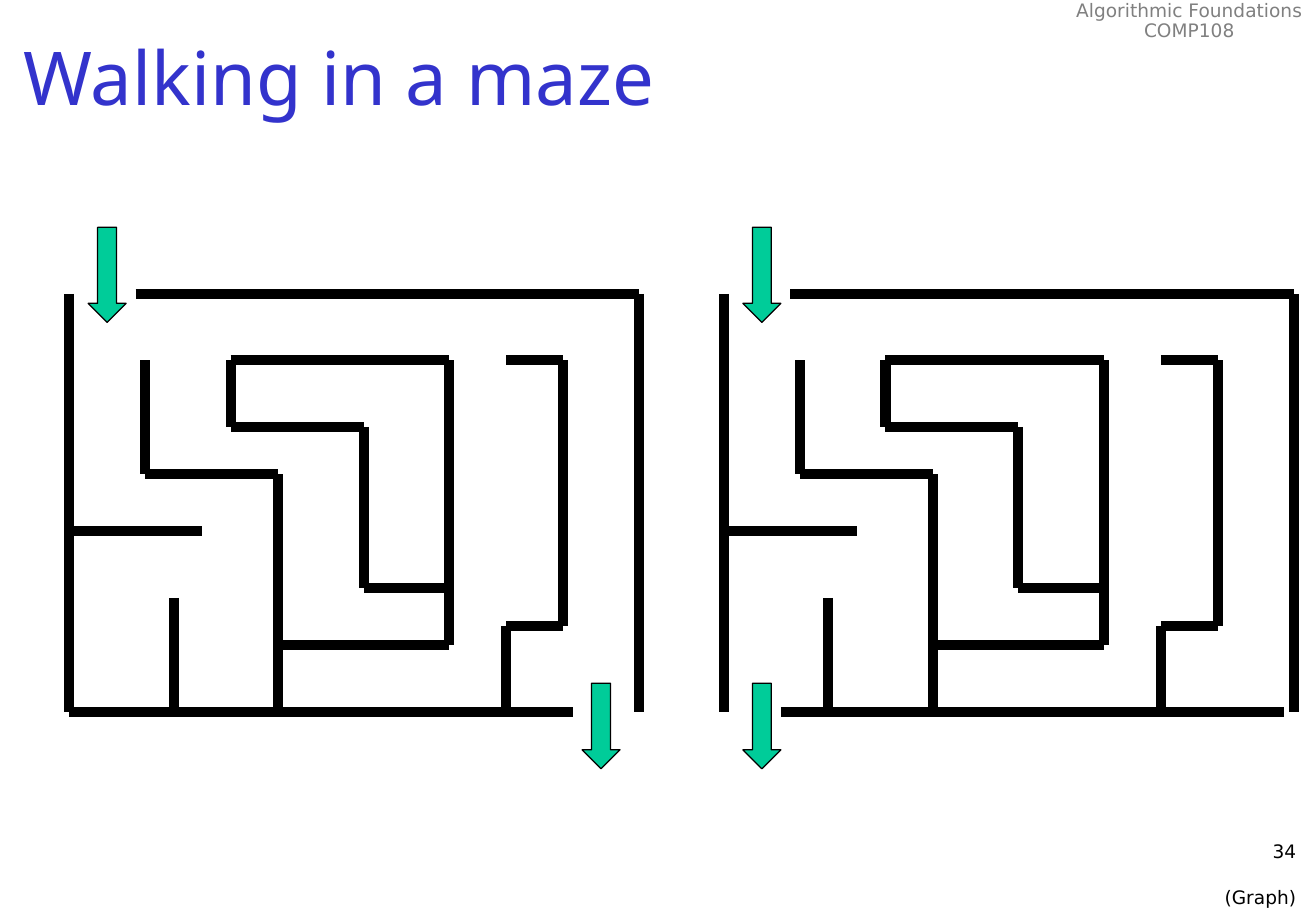
from dataclasses import dataclass

from lxml import etree
from pptx import Presentation
from pptx.dml.color import RGBColor
from pptx.enum.shapes import MSO_CONNECTOR, MSO_SHAPE
from pptx.enum.text import MSO_ANCHOR, MSO_AUTO_SIZE, PP_ALIGN
from pptx.oxml.ns import qn
from pptx.slide import Slide
from pptx.text.text import TextFrame
from pptx.util import Pt

STRAIGHT = MSO_CONNECTOR.STRAIGHT
DOWN_ARROW = MSO_SHAPE.DOWN_ARROW
LEFT, CENTER, RIGHT = PP_ALIGN.LEFT, PP_ALIGN.CENTER, PP_ALIGN.RIGHT
MIDDLE = MSO_ANCHOR.MIDDLE
NO_AUTOFIT = MSO_AUTO_SIZE.NONE

COLORS = {
    "title": "3333CC",
    "header": "808080",
    "text": "000000",
    "wall": "000000",
    "arrow": "00CC99",
}
CELL = 5.63  # points per maze grid unit
MAZE_TOP = 174.2
ARROW_WIDTH = 4


@dataclass(frozen=True)
class Wall:
    """A wall between two grid points."""
    x1: int
    y1: int
    x2: int
    y2: int


@dataclass(frozen=True)
class Arrow:
    """A downward arrow, in grid units."""
    x: int
    y: int
    height: int


@dataclass(frozen=True)
class Maze:
    """A maze whose bottom wall leaves a gap at the exit."""
    left: float
    bottom_wall: Wall
    exit_arrow: Arrow


SHARED_WALLS = [
    Wall(0, 0, 0, 44),
    Wall(7, 0, 60, 0),
    Wall(60, 0, 60, 44),
    Wall(8, 7, 8, 19),
    Wall(8, 19, 22, 19),
    Wall(22, 19, 22, 44),
    Wall(0, 25, 14, 25),
    Wall(11, 32, 11, 44),
    Wall(17, 7, 17, 14),
    Wall(17, 14, 31, 14),
    Wall(31, 14, 31, 31),
    Wall(31, 31, 40, 31),
    Wall(17, 7, 40, 7),
    Wall(40, 7, 40, 31),
    Wall(40, 31, 40, 37),
    Wall(22, 37, 40, 37),
    Wall(46, 7, 52, 7),
    Wall(52, 7, 52, 25),
    Wall(52, 25, 52, 35),
    Wall(46, 35, 52, 35),
    Wall(46, 35, 46, 44),
]
ENTRANCE = Arrow(2, -7, 10)
MAZES = [
    Maze(41, Wall(0, 44, 53, 44), Arrow(54, 41, 9)),
    Maze(429.1, Wall(6, 44, 59, 44), Arrow(2, 41, 9)),
]


def color(name: str) -> RGBColor:
    return RGBColor.from_string(COLORS[name])


def write_lines(frame: TextFrame, lines: list[str], font_name: str, size: float,
                color_name: str, alignment: PP_ALIGN) -> None:
    frame.text = "\n".join(lines)
    for paragraph in frame.paragraphs:
        paragraph.alignment = alignment
        paragraph.font.name = font_name
        paragraph.font.size = Pt(size)
        paragraph.font.color.rgb = color(color_name)


def add_title(slide: Slide) -> None:
    title = slide.shapes.title
    title.left, title.top, title.width, title.height = Pt(6.5), Pt(0), Pt(773.3), Pt(90)
    frame = title.text_frame
    frame.auto_size = NO_AUTOFIT
    frame.vertical_anchor = MIDDLE
    write_lines(frame, ["Walking in a maze"], "Noto Sans", 44, "title", LEFT)


def add_header(slide: Slide) -> None:
    header = slide.shapes.add_textbox(Pt(630), Pt(-2.9), Pt(149.8), Pt(31))
    frame = header.text_frame
    frame.word_wrap = False
    write_lines(frame, ["Algorithmic Foundations", "COMP108"],
                "DejaVu Sans", 11, "header", CENTER)
    for paragraph in frame.paragraphs:
        paragraph.line_spacing = 0.9


def add_footer(slide: Slide) -> None:
    footer = slide.shapes.add_textbox(Pt(612.7), Pt(494.6), Pt(162.7), Pt(36))
    frame = footer.text_frame
    frame.word_wrap = True
    write_lines(frame, ["34", "(Graph)"], "DejaVu Sans", 11, "text", RIGHT)
    frame.paragraphs[1].space_before = Pt(13.8)


def add_wall(slide: Slide, maze: Maze, wall: Wall) -> None:
    connector = slide.shapes.add_connector(
        STRAIGHT,
        Pt(maze.left + wall.x1 * CELL), Pt(MAZE_TOP + wall.y1 * CELL),
        Pt(maze.left + wall.x2 * CELL), Pt(MAZE_TOP + wall.y2 * CELL))
    connector.line.width = Pt(6)
    connector.line.color.rgb = color("wall")
    etree.SubElement(connector._element.spPr, qn("a:effectLst"))


def add_arrow(slide: Slide, maze: Maze, arrow: Arrow) -> None:
    shape = slide.shapes.add_shape(
        DOWN_ARROW,
        Pt(maze.left + arrow.x * CELL), Pt(MAZE_TOP + arrow.y * CELL),
        Pt(ARROW_WIDTH * CELL), Pt(arrow.height * CELL))
    shape.shadow.inherit = False
    shape.fill.solid()
    shape.fill.fore_color.rgb = color("arrow")
    shape.line.color.rgb = color("wall")
    shape.line.width = Pt(0.75)


def main() -> None:
    presentation = Presentation()
    presentation.slide_width = Pt(780)
    presentation.slide_height = Pt(540)
    slide = presentation.slides.add_slide(presentation.slide_layouts[5])
    add_header(slide)
    add_title(slide)
    add_footer(slide)
    for maze in MAZES:
        for wall in [*SHARED_WALLS, maze.bottom_wall]:
            add_wall(slide, maze, wall)
        for arrow in (ENTRANCE, maze.exit_arrow):
            add_arrow(slide, maze, arrow)
    presentation.save("out.pptx")


if __name__ == "__main__":
    main()
